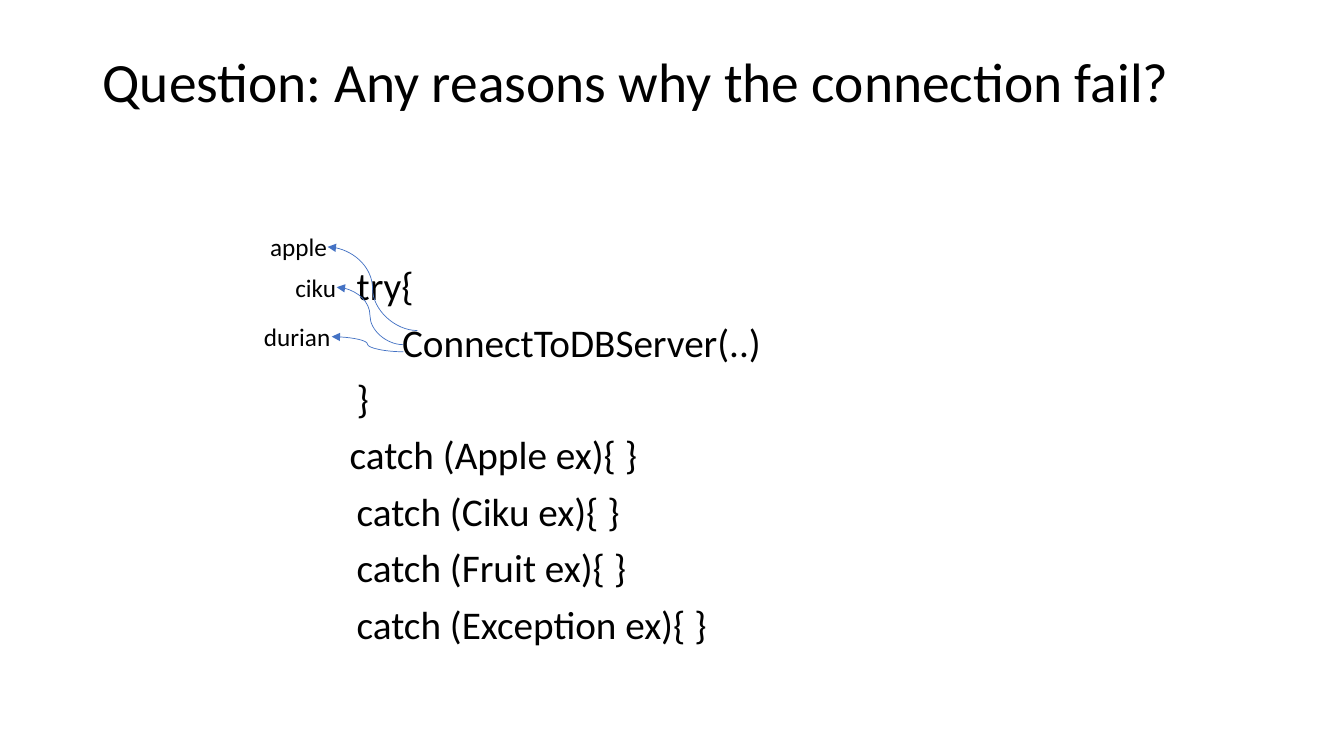
from lxml.etree import SubElement
from pptx import Presentation
from pptx.dml.color import RGBColor
from pptx.enum.shapes import MSO_CONNECTOR as Link
from pptx.enum.text import MSO_ANCHOR as Anchor, MSO_AUTO_SIZE as Fit
from pptx.oxml.ns import qn
from pptx.util import Inches, Pt

SLIDE_WIDTH, SLIDE_HEIGHT = 13.33, 7.5
COLUMNS, ROWS = 133.3, 75
INSET = 1  # side padding of a text box, in columns
LABEL_HEIGHT = 4


def color(hex_value):
    return RGBColor.from_string(hex_value)


class CodeSlide:
    """Holds the style and draws on one slide, in grid columns and rows."""

    font = "Calibri"
    ink = "000000"
    arrow_ink = "4472C4"

    def __init__(self, deck):
        self.slide = deck.slides.add_slide(deck.slide_layouts[6])

    def x(self, columns):
        return Inches(columns * SLIDE_WIDTH / COLUMNS)

    def y(self, rows):
        return Inches(rows * SLIDE_HEIGHT / ROWS)

    def text(self, box, lines, size, frame_format, paragraph_format):
        """Write (indent, wording) lines into one text box."""
        left, top, width, height = box
        frame = self.slide.shapes.add_textbox(
            self.x(left), self.y(top), self.x(width), self.y(height)).text_frame
        for key, value in frame_format.items():
            setattr(frame, key, value)
        for number, (indent, wording) in enumerate(lines):
            paragraph = frame.add_paragraph() if number else frame.paragraphs[0]
            for key, value in paragraph_format.items():
                setattr(paragraph, key, value)
            if indent:
                properties = paragraph._p.get_or_add_pPr()
                properties.set("marL", str(self.x(indent)))
                properties.set("indent", "0")
            run = paragraph.add_run()
            run.text = wording
            for key, value in {"name": self.font, "size": Pt(size)}.items():
                setattr(run.font, key, value)
            run.font.color.rgb = color(self.ink)

    def title(self, box, wording):
        self.text(box, [(0, wording)], 39.6,
                  {"word_wrap": True, "vertical_anchor": Anchor.MIDDLE},
                  {"line_spacing": 0.9})

    def code(self, box, lines):
        self.text(box, lines, 28, {"word_wrap": True},
                  {"line_spacing": 0.9, "space_before": Pt(10)})

    def label(self, left, top, width, wording):
        self.text((left, top, width, LABEL_HEIGHT), [(0, wording)], 18,
                  {"word_wrap": False, "auto_size": Fit.SHAPE_TO_FIT_TEXT}, {})

    def curved_arrow(self, start, tip):
        arrow = self.slide.shapes.add_connector(
            Link.CURVE, self.x(start[0]), self.y(start[1]),
            self.x(tip[0]), self.y(tip[1]))
        arrow.line.color.rgb = color(self.arrow_ink)
        arrow.line.width = Pt(0.5)
        SubElement(arrow.line._get_or_add_ln(), qn("a:tailEnd"), type="triangle")
        SubElement(arrow._element.spPr, qn("a:effectLst"))


BLOCK, BODY, FIRST_CATCH = 25.2, 29.7, 24.5
CODE = [
    (BLOCK, "try{"),
    (BODY, "ConnectToDBServer(..)"),
    (BLOCK, "}"),
    (FIRST_CATCH, "catch (Apple ex){ }"),
    (BLOCK, "catch (Ciku ex){ }"),
    (BLOCK, "catch (Fruit ex){ }"),
    (BLOCK, "catch (Exception ex){ }"),
]
# wording, left, top, width, start of its arrow
EXCEPTIONS = [
    ("apple", 25.8, 22.5, 7.7, (41.4, 32.8)),
    ("ciku", 28.3, 26.5, 6.1, (40, 34.2)),
    ("durian", 25.2, 31.4, 8.7, (40, 34.9)),
]


def main():
    deck = Presentation()
    deck.slide_width, deck.slide_height = Inches(SLIDE_WIDTH), Inches(SLIDE_HEIGHT)
    page = CodeSlide(deck)
    page.title((9.2, 4, 115, 8.8), "Question: Any reasons why the connection fail?")
    page.code((9.2, 26, 115, 47.9), CODE)
    for wording, left, top, width, start in EXCEPTIONS:
        page.curved_arrow(start, (left + width - INSET, top + LABEL_HEIGHT / 2))
        page.label(left, top, width, wording)
    deck.save("out.pptx")


if __name__ == "__main__":
    main()
